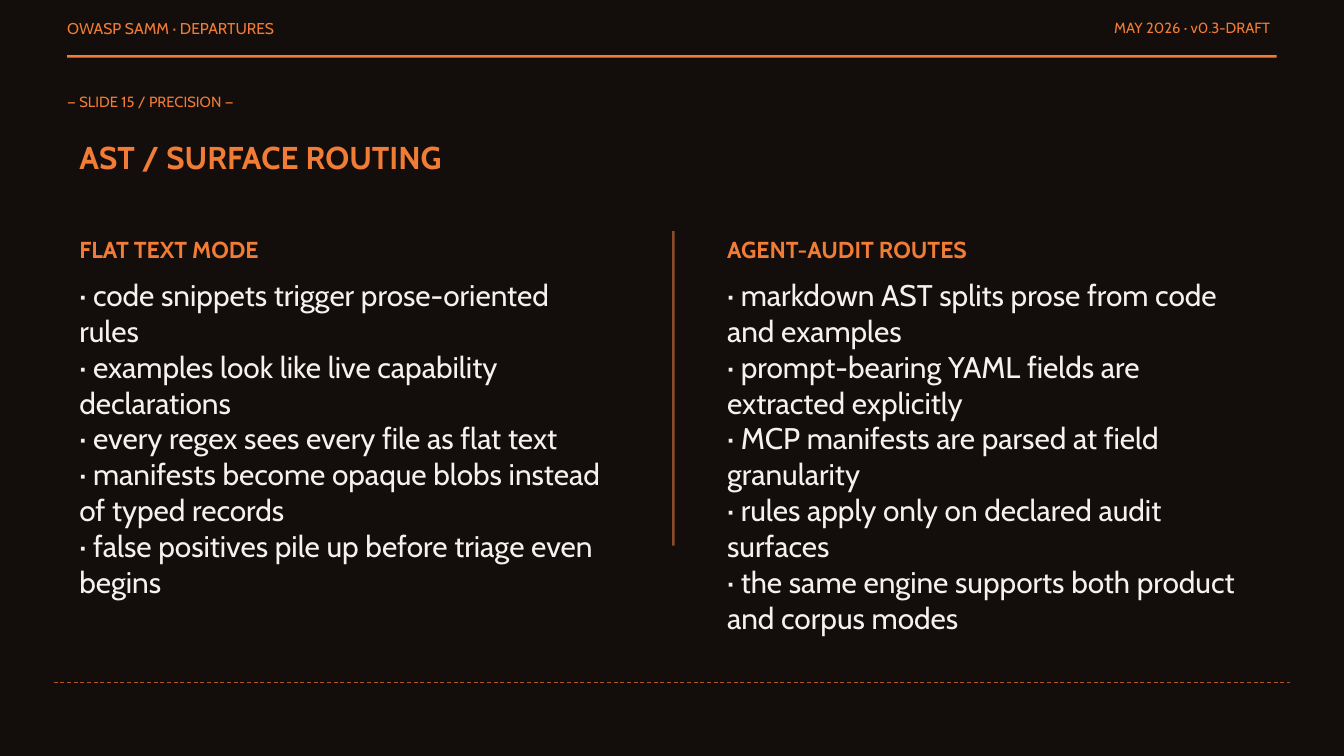
"""Build the two-column slide on AST and surface routing."""
from lxml import etree
from pptx import Presentation
from pptx.dml.color import RGBColor
from pptx.enum.dml import MSO_LINE
from pptx.enum.shapes import MSO_CONNECTOR, MSO_SHAPE
from pptx.enum.text import PP_ALIGN
from pptx.oxml.ns import qn
from pptx.util import Inches, Pt

RECT, LINE = MSO_SHAPE.RECTANGLE, MSO_CONNECTOR.STRAIGHT
LEFT, RIGHT, DASH = PP_ALIGN.LEFT, PP_ALIGN.RIGHT, MSO_LINE.DASH

WIDE = 10
HIGH = WIDE * 9 / 16
DARK, ORANGE, PALE = "130D0B", "F07C35", "F5F1EE"
BROWN, RUST = "8A4B28", "B05520"
FONT = "Cabin"

HEADER = "OWASP SAMM · DEPARTURES"
VERSION = "MAY 2026 · v0.3-DRAFT"
LABEL = "— SLIDE 15 / PRECISION —"
TITLE = "AST / SURFACE ROUTING"
COLUMNS = [
    ("FLAT TEXT MODE", 2.03, [
        "code snippets trigger prose-oriented rules",
        "examples look like live capability declarations",
        "every regex sees every file as flat text",
        "manifests become opaque blobs instead of typed records",
        "false positives pile up before triage even begins",
    ]),
    ("AGENT-AUDIT ROUTES", 2.97, [
        "markdown AST splits prose from code and examples",
        "prompt-bearing YAML fields are extracted explicitly",
        "MCP manifests are parsed at field granularity",
        "rules apply only on declared audit surfaces",
        "the same engine supports both product and corpus modes",
    ]),
]

MARGIN, INSET = 0.5, 0.59
PITCH, COL = 4.82, 3.91

deck = Presentation()
deck.slide_width, deck.slide_height = Inches(WIDE), Inches(HIGH)
slide = deck.slides.add_slide(deck.slide_layouts[6])


def rgb(code):
    """Turn a hex string into a colour."""
    return RGBColor.from_string(code)


def write(lines, x, y, w, h, size=7.9, color=ORANGE, bold=False, align=LEFT):
    """Add a text box with one paragraph per line."""
    box = slide.shapes.add_textbox(Inches(x), Inches(y), Inches(w), Inches(h))
    frame = box.text_frame
    frame.word_wrap = True
    frame.margin_left = frame.margin_right = 0
    frame.margin_top = frame.margin_bottom = 0
    frame.text = "\n".join(lines)
    for para in frame.paragraphs:
        para.alignment = align
        font = para.runs[0].font
        font.name, font.size, font.bold = FONT, Pt(size), bold
        font.color.rgb = rgb(color)


def bar(x, y, w, h, color):
    """Add a plain filled rectangle."""
    shape = slide.shapes.add_shape(RECT, Inches(x), Inches(y), Inches(w), Inches(h))
    shape.shadow.inherit = False
    shape.fill.solid()
    shape.fill.fore_color.rgb = rgb(color)
    shape.line.fill.background()


def rule(x, y, end, color):
    """Add a thin dashed horizontal line."""
    line = slide.shapes.add_connector(LINE, Inches(x), Inches(y), Inches(end), Inches(y))
    line.line.color.rgb = rgb(color)
    line.line.width, line.line.dash_style = Pt(0.5), DASH
    etree.SubElement(line._element.spPr, qn("a:effectLst"))


bar(0, 0, WIDE, HIGH, DARK)
write([HEADER], MARGIN, 0.14, 2.58, 0.19, size=8.4)
write([VERSION], 7.89, 0.14, 1.56, 0.19, align=RIGHT)
bar(MARGIN, 0.41, WIDE - 2 * MARGIN, 0.02, ORANGE)
write([LABEL], MARGIN, 0.69, 1.95, 0.17)
write([TITLE], INSET, 1.03, 6.72, 0.42, size=16.9, bold=True)

for i, (head, span, points) in enumerate(COLUMNS):
    x = INSET + i * PITCH
    write([head], x, 1.75, span, 0.22, size=12.4, bold=True)
    write([f"· {point}" for point in points], x, 2.06, COL, 2.5, size=16, color=PALE)

bar(WIDE / 2, 1.72, 0.02, 2.34, BROWN)
rule(0.4, 5.08, WIDE - 0.4, RUST)

deck.save("out.pptx")
